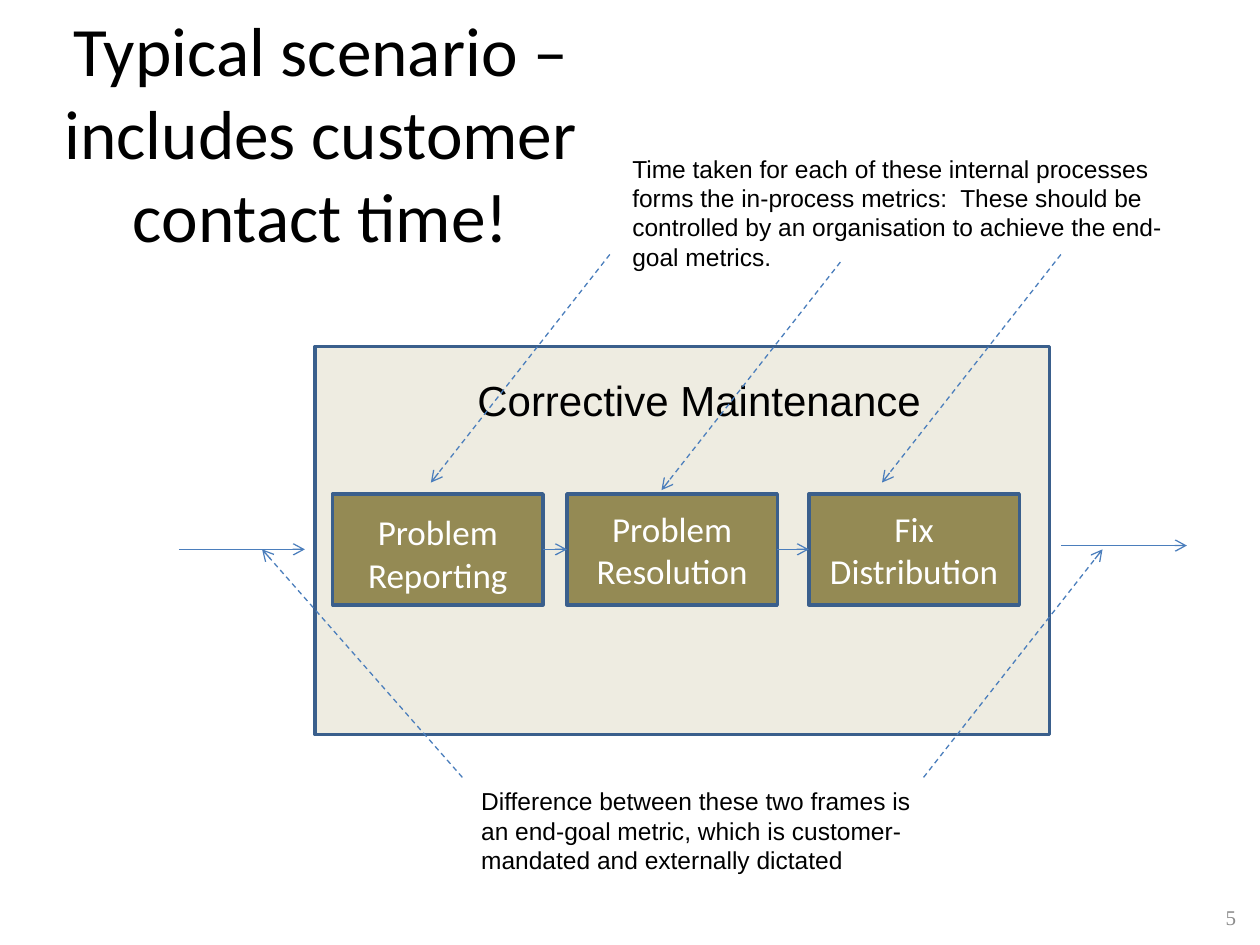
from lxml.etree import SubElement
from pptx import Presentation
from pptx.dml.color import RGBColor
from pptx.enum.dml import MSO_LINE
from pptx.enum.shapes import MSO_CONNECTOR, MSO_SHAPE
from pptx.enum.text import MSO_ANCHOR, PP_ALIGN
from pptx.oxml.ns import qn
from pptx.util import Inches, Pt

BLACK, WHITE, GREY = "000000", "FFFFFF", "8C8C8C"
CREAM, OLIVE, NAVY, BLUE = "EEECE1", "948A54", "3A5F8C", "4B7EBC"

TITLE = "Typical scenario – includes customer contact time!"
FRAME_LABEL = "Corrective Maintenance"
IN_PROCESS_NOTE = ("Time taken for each of these internal processes forms the "
                   "in-process metrics:  These should be controlled by an "
                   "organisation to achieve the end-goal metrics.")
END_GOAL_NOTE = ("Difference between these two frames is an end-goal metric, "
                 "which is customer-mandated and externally dictated")
PAGE_NUMBER = "5"

FRAME = (2.5, 2.75, 5.83, 3.08)
STEP_TOP, STEP_WIDTH, STEP_HEIGHT = 3.92, 1.67, 0.88
# left edge, then (text, size) runs
STEPS = [
    (2.64, [("Problem", 20), (" ", 24), ("Reporting", 20)]),
    (4.5, [("Problem Resolution", 20)]),
    (6.42, [("Fix Distribution", 20)]),
]
# left end, height of the arrows entering and leaving the frame
FLOW_LENGTH = 1
FLOWS = [(1.42, 4.36), (8.42, 4.33)]
# tip of each arrow from the in-process note
IN_PROCESS_TIPS = [(3.42, 3.83), (5.25, 3.89), (7, 3.83)]
IN_PROCESS_RUN, IN_PROCESS_RISE = 1.42, 1.81
# start and tip of each arrow from the end-goal note
END_GOAL_ARROWS = [((3.67, 6.17), (2.08, 4.36)), ((7.33, 6.17), (8.75, 4.36))]


def color(value):
    return RGBColor.from_string(value)


def write(shape, runs, font, fill, align, anchor, wrap=True):
    frame = shape.text_frame
    frame.word_wrap = wrap
    frame.vertical_anchor = anchor
    paragraph = frame.paragraphs[0]
    paragraph.alignment = align
    for text, size in runs:
        run = paragraph.add_run()
        run.text = text
        run.font.name = font
        run.font.size = Pt(size)
        run.font.color.rgb = color(fill)


def add_text(slide, box, text, size, font="Arial", fill=BLACK,
             align=PP_ALIGN.LEFT, anchor=MSO_ANCHOR.TOP, wrap=True):
    shape = slide.shapes.add_textbox(*map(Inches, box))
    write(shape, [(text, size)], font, fill, align, anchor, wrap)


def add_rectangle(slide, box, fill):
    shape = slide.shapes.add_shape(MSO_SHAPE.RECTANGLE, *map(Inches, box))
    shape.shadow.inherit = False
    shape.fill.solid()
    shape.fill.fore_color.rgb = color(fill)
    shape.line.color.rgb = color(NAVY)
    shape.line.width = Pt(2)
    return shape


def add_arrow(slide, start=(0, 0), end=(0, 0), dashed=False):
    connector = slide.shapes.add_connector(
        MSO_CONNECTOR.STRAIGHT, *map(Inches, (*start, *end)))
    line = connector.line
    line.color.rgb = color(BLUE)
    line.width = Pt(0.75)
    if dashed:
        line.dash_style = MSO_LINE.DASH
    properties = connector.element.spPr
    SubElement(properties.find(qn("a:ln")), qn("a:tailEnd"), type="arrow")
    SubElement(properties, qn("a:effectLst"))
    return connector


def main():
    presentation = Presentation()
    presentation.slide_width = Inches(10)
    presentation.slide_height = Inches(7.5)
    slide = presentation.slides.add_slide(presentation.slide_layouts[6])

    add_text(slide, (7.58, 7.08, 2.33, 0.4), PAGE_NUMBER, 12,
             "Times New Roman", GREY, PP_ALIGN.RIGHT, MSO_ANCHOR.MIDDLE)
    add_text(slide, (0.17, 0.42, 4.75, 1.25), TITLE, 39.6, "Calibri",
             align=PP_ALIGN.CENTER, anchor=MSO_ANCHOR.MIDDLE)

    add_rectangle(slide, FRAME, CREAM)
    add_text(slide, (3.69, 2.92, 3.76, 0.5), FRAME_LABEL, 24, wrap=False)

    boxes = []
    for left, runs in STEPS:
        box = add_rectangle(
            slide, (left, STEP_TOP, STEP_WIDTH, STEP_HEIGHT), OLIVE)
        write(box, runs, "Calibri", WHITE, PP_ALIGN.CENTER, MSO_ANCHOR.MIDDLE)
        boxes.append(box)
    for before, after in zip(boxes, boxes[1:]):
        arrow = add_arrow(slide)
        arrow.begin_connect(before, 3)
        arrow.end_connect(after, 1)

    for left, y in FLOWS:
        add_arrow(slide, (left, y), (left + FLOW_LENGTH, y))
    for start, tip in END_GOAL_ARROWS:
        add_arrow(slide, start, tip, dashed=True)
    for x, y in IN_PROCESS_TIPS:
        add_arrow(slide, (x + IN_PROCESS_RUN, y - IN_PROCESS_RISE), (x, y),
                  dashed=True)

    add_text(slide, (4.92, 1.17, 4.5, 1.04), IN_PROCESS_NOTE, 14)
    add_text(slide, (3.72, 6.19, 3.78, 0.81), END_GOAL_NOTE, 14)
    presentation.save("out.pptx")


if __name__ == "__main__":
    main()
